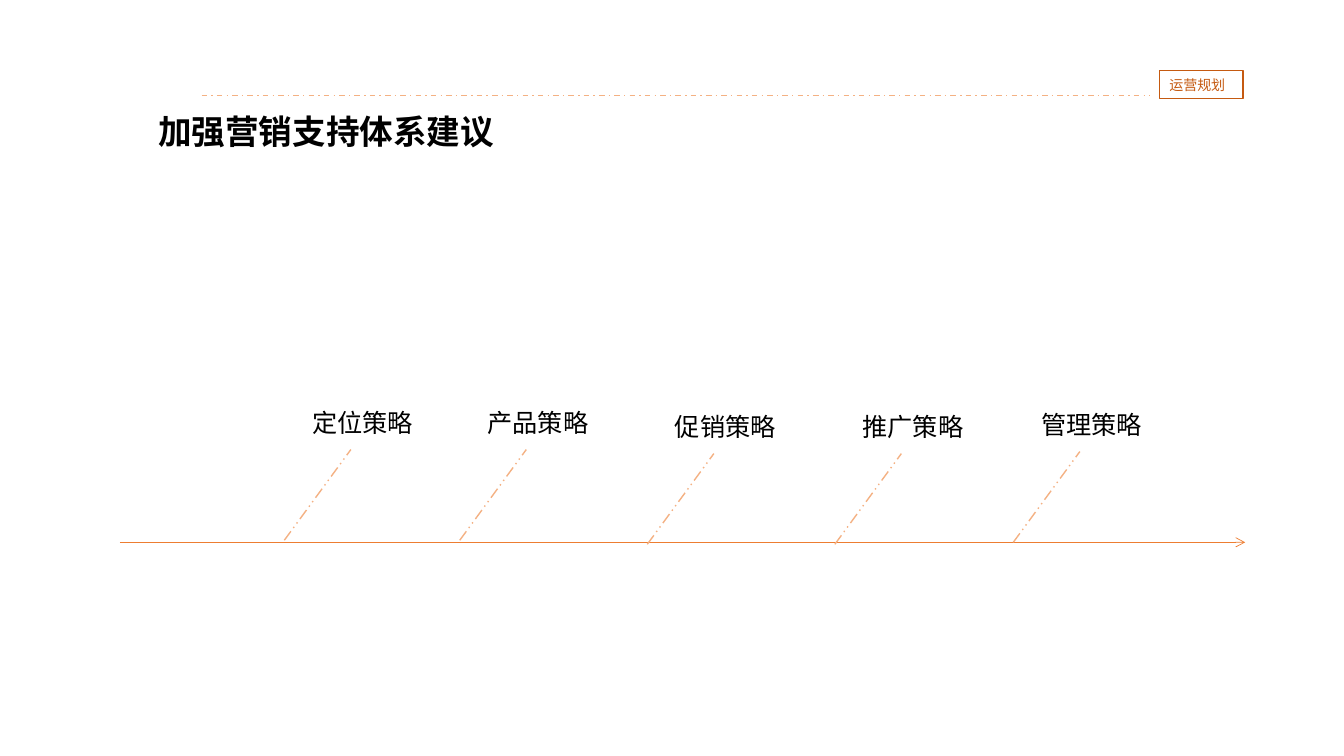
from dataclasses import dataclass

import pptx
import pptx.dml.color
import pptx.enum.dml
import pptx.enum.shapes
import pptx.enum.text
import pptx.oxml.ns
import pptx.util
from lxml import etree
from pptx.util import Inches

FONT = "Noto Sans CJK SC"
DASH = pptx.enum.dml.MSO_LINE
ALIGN = pptx.enum.text.PP_ALIGN
ANCHOR = pptx.enum.text.MSO_ANCHOR
ORANGE, PEACH, RUST, BLACK = "ED7D31", "F4B183", "C55A11", "000000"


@dataclass
class Step:
    text: str
    left: float
    base: float


STEPS = [
    Step("定位策略", 2.82, 5.36),
    Step("产品策略", 4.56, 5.36),
    Step("促销策略", 6.42, 5.4),
    Step("推广策略", 8.28, 5.4),
    Step("管理策略", 10.05, 5.38),
]


def color(code: str):
    return pptx.dml.color.RGBColor.from_string(code)


def write(shape, text: str, size=18, fill=BLACK, bold=False,
          align=ALIGN.LEFT, anchor=ANCHOR.TOP) -> None:
    frame = shape.text_frame
    frame.word_wrap = True
    frame.auto_size = pptx.enum.text.MSO_AUTO_SIZE.SHAPE_TO_FIT_TEXT
    frame.vertical_anchor = anchor
    para = frame.paragraphs[0]
    para.alignment = align
    run = para.add_run()
    run.text = text
    font = run.font
    font.name, font.size, font.bold = FONT, pptx.util.Pt(size), bold
    font.color.rgb = color(fill)
    east = etree.SubElement(run._r.get_or_add_rPr(), pptx.oxml.ns.qn("a:ea"))
    east.set("typeface", FONT)


def add_text(slide, text: str, left: float, top: float, width: float,
             height: float, **style) -> None:
    box = slide.shapes.add_textbox(
        Inches(left), Inches(top), Inches(width), Inches(height))
    write(box, text, **style)


def add_line(slide, start: tuple[float, float], end: tuple[float, float],
             tint: str, width=1.0, dash=None, arrow=False) -> None:
    link = slide.shapes.add_connector(
        pptx.enum.shapes.MSO_CONNECTOR.STRAIGHT,
        *map(Inches, start), *map(Inches, end))
    link.line.color.rgb = color(tint)
    link.line.width = pptx.util.Pt(width)
    if dash:
        link.line.dash_style = dash
    if arrow:
        tail = etree.SubElement(
            link.line._get_or_add_ln(), pptx.oxml.ns.qn("a:tailEnd"))
        tail.set("type", "arrow")
    etree.SubElement(link._element.spPr, pptx.oxml.ns.qn("a:effectLst"))


def add_step(slide, step: Step) -> None:
    add_line(slide, (step.left, step.base), (step.left + 0.66, step.base - 0.9),
             PEACH, dash=DASH.DASH_DOT_DOT)
    add_text(slide, step.text, step.left - 0.06, step.base - 1.37, 1.67, 0.4,
             align=ALIGN.CENTER)


def add_badge(slide, text: str) -> None:
    badge = slide.shapes.add_shape(
        pptx.enum.shapes.MSO_SHAPE.RECTANGLE,
        Inches(11.5), Inches(0.7), Inches(0.83), Inches(0.28))
    badge.shadow.inherit = False
    badge.fill.background()
    badge.line.color.rgb = color(RUST)
    badge.line.width = pptx.util.Pt(1)
    write(badge, text, size=10, fill=RUST, anchor=ANCHOR.MIDDLE)


def main() -> None:
    deck = pptx.Presentation()
    deck.slide_width, deck.slide_height = Inches(13.33), Inches(7.5)
    slide = deck.slides.add_slide(deck.slide_layouts[6])
    add_line(slide, (1.19, 5.38), (12.35, 5.38), ORANGE, width=0.5, arrow=True)
    for step in STEPS:
        add_step(slide, step)
    add_text(slide, "加强营销支持体系建议", 1.47, 1.05, 3.57, 0.53,
             size=24, bold=True)
    add_line(slide, (2, 0.95), (11.4, 0.95), PEACH, dash=DASH.DASH_DOT)
    add_badge(slide, "运营规划")
    deck.save("out.pptx")


if __name__ == "__main__":
    main()
